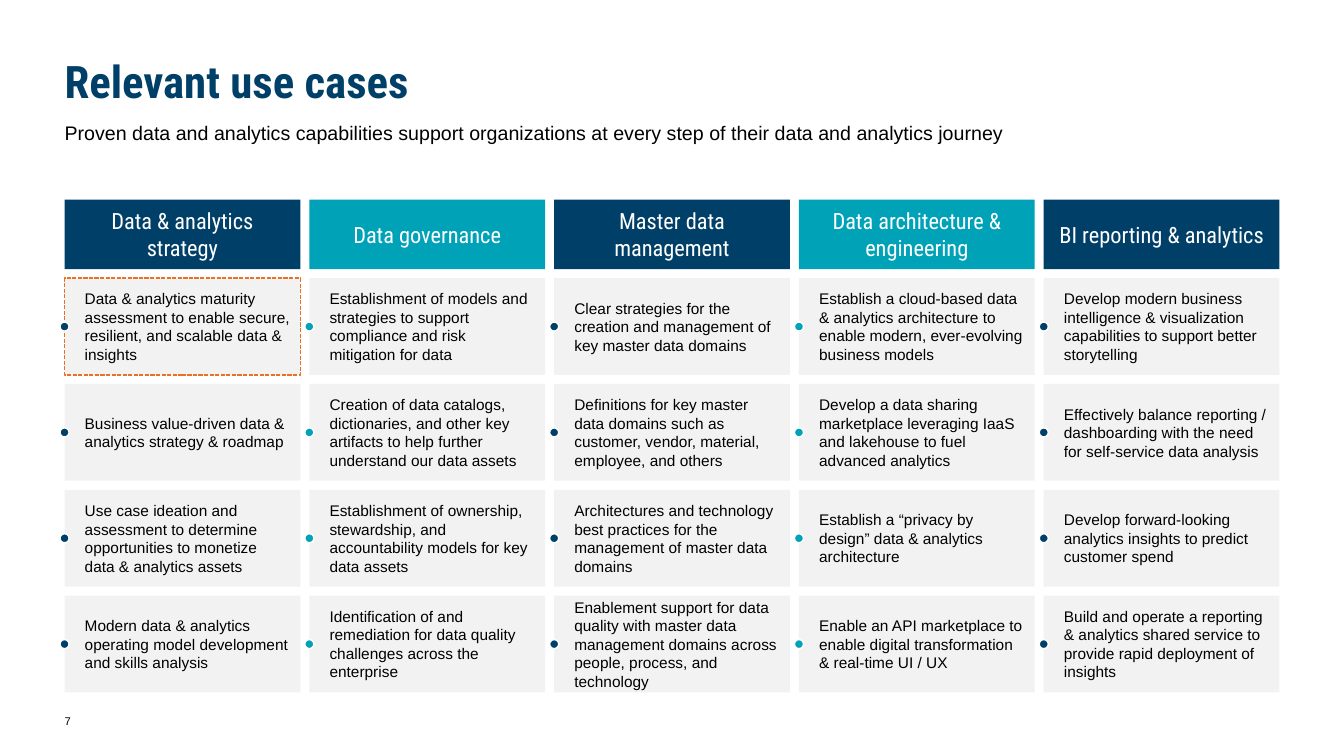
from dataclasses import dataclass

from pptx import Presentation
from pptx import util as u
from pptx.dml.color import RGBColor
from pptx.enum import dml, shapes, text

NAVY = RGBColor(0x00, 0x40, 0x68)
TEAL = RGBColor(0x00, 0xA2, 0xB8)
ORANGE = RGBColor(0xEA, 0x70, 0x24)
GREY = RGBColor(0xF2, 0xF2, 0xF2)
WHITE = RGBColor(0xFF, 0xFF, 0xFF)
BLACK = RGBColor(0x00, 0x00, 0x00)
HEADING, BODY = "Roboto Condensed", "Arial"

# Grid in inches: five columns, one header row and four card rows
LEFT, WIDTH, GAP = 0.64, 12.05, 0.09
HEADER_TOP, HEADER_H = 1.98, 0.69
CARD_TOP, CARD_H = HEADER_TOP + HEADER_H + GAP, 0.96
DOT = 0.09


@dataclass(frozen=True)
class Box:
    left: float
    top: float
    width: float
    height: float

    def emu(self) -> list[int]:
        return [u.Inches(v) for v in (self.left, self.top, self.width, self.height)]


@dataclass(frozen=True)
class Style:
    font: str
    size: int
    color: RGBColor
    bold: bool = False
    align: text.PP_ALIGN = text.PP_ALIGN.LEFT
    anchor: text.MSO_ANCHOR = text.MSO_ANCHOR.MIDDLE
    insets: tuple[float, float, float, float] = (0.1, 0.05, 0.1, 0.05)


@dataclass(frozen=True)
class Capability:
    title: str
    color: RGBColor
    use_cases: tuple[str, ...]


TITLE = Style(HEADING, 32, NAVY, bold=True, anchor=text.MSO_ANCHOR.BOTTOM,
              insets=(0, 0.05, 0, 0.05))
SUBTITLE = Style(BODY, 14, BLACK, anchor=text.MSO_ANCHOR.TOP, insets=(0, 0, 0, 0))
PAGE_NUMBER = Style(BODY, 8, BLACK, insets=(0, 0.05, 0.1, 0.05))
HEADER = Style(HEADING, 16, WHITE, align=text.PP_ALIGN.CENTER)
CARD = Style(BODY, 11, BLACK, insets=(0.2, 0.05, 0.1, 0.05))

CAPABILITIES = (
    Capability("Data & analytics strategy", NAVY, (
        "Data & analytics maturity assessment to enable secure, resilient, "
        "and scalable data & insights",
        "Business value-driven data & analytics strategy & roadmap",
        "Use case ideation and assessment to determine opportunities to "
        "monetize data & analytics assets",
        "Modern data & analytics operating model development and skills analysis",
    )),
    Capability("Data governance", TEAL, (
        "Establishment of models and strategies to support compliance and "
        "risk mitigation for data",
        "Creation of data catalogs, dictionaries, and other key artifacts to "
        "help further understand our data assets",
        "Establishment of ownership, stewardship, and accountability models "
        "for key data assets",
        "Identification of and remediation for data quality challenges across "
        "the enterprise",
    )),
    Capability("Master data management", NAVY, (
        "Clear strategies for the creation and management of key master data domains",
        "Definitions for key master data domains such as customer, vendor, "
        "material, employee, and others",
        "Architectures and technology best practices for the management of "
        "master data domains",
        "Enablement support for data quality with master data management "
        "domains across people, process, and technology",
    )),
    Capability("Data architecture & engineering", TEAL, (
        "Establish a cloud-based data & analytics architecture to enable "
        "modern, ever-evolving business models",
        "Develop a data sharing marketplace leveraging IaaS and lakehouse to "
        "fuel advanced analytics",
        "Establish a “privacy by design” data & analytics architecture",
        "Enable an API marketplace to enable digital transformation & "
        "real-time UI / UX",
    )),
    Capability("BI reporting & analytics", NAVY, (
        "Develop modern business intelligence & visualization capabilities to "
        "support better storytelling",
        "Effectively balance reporting / dashboarding with the need for "
        "self-service data analysis",
        "Develop forward-looking analytics insights to predict customer spend",
        "Build and operate a reporting & analytics shared service to provide "
        "rapid deployment of insights",
    )),
)
COLUMN_W = (WIDTH - GAP * (len(CAPABILITIES) - 1)) / len(CAPABILITIES)


def write(sp, words: str, style: Style) -> None:
    tf = sp.text_frame
    tf.word_wrap = True
    tf.vertical_anchor = style.anchor
    tf.margin_left, tf.margin_top, tf.margin_right, tf.margin_bottom = (
        u.Inches(v) for v in style.insets)
    p = tf.paragraphs[0]
    p.alignment = style.align
    r = p.add_run()
    r.text = words
    r.font.name, r.font.size, r.font.bold = style.font, u.Pt(style.size), style.bold
    r.font.color.rgb = style.color


def add_text(s, box: Box, words: str, style: Style) -> None:
    write(s.shapes.add_textbox(*box.emu()), words, style)


def add_filled(s, kind: shapes.MSO_SHAPE, box: Box, fill: RGBColor,
               line: RGBColor | None = None):
    sp = s.shapes.add_shape(kind, *box.emu())
    sp.shadow.inherit = False
    sp.fill.solid()
    sp.fill.fore_color.rgb = fill
    if line is None:
        sp.line.fill.background()
    else:
        sp.line.color.rgb = line
        sp.line.width = u.Pt(1)
    return sp


def add_column(s, index: int, capability: Capability) -> None:
    """Draw a header, its cards, and a dot centred on each card's left edge."""
    left = LEFT + index * (COLUMN_W + GAP)
    header = add_filled(s, shapes.MSO_SHAPE.RECTANGLE,
                        Box(left, HEADER_TOP, COLUMN_W, HEADER_H), capability.color)
    write(header, capability.title, HEADER)
    for row, use_case in enumerate(capability.use_cases):
        top = CARD_TOP + row * (CARD_H + GAP)
        highlighted = index == row == 0
        card = add_filled(s, shapes.MSO_SHAPE.RECTANGLE, Box(left, top, COLUMN_W, CARD_H),
                          GREY, ORANGE if highlighted else None)
        if highlighted:
            card.line.dash_style = dml.MSO_LINE.SQUARE_DOT
        write(card, use_case, CARD)
        add_filled(s, shapes.MSO_SHAPE.OVAL,
                   Box(left - DOT / 2, top + (CARD_H - DOT) / 2, DOT, DOT),
                   capability.color, WHITE)


def main() -> None:
    prs = Presentation()
    prs.slide_width, prs.slide_height = u.Inches(13.33), u.Inches(7.5)
    s = prs.slides.add_slide(prs.slide_layouts[6])
    add_text(s, Box(LEFT, 0.64, WIDTH, 0.48), "Relevant use cases", TITLE)
    add_text(s, Box(LEFT, 1.2, WIDTH, 0.3),
             "Proven data and analytics capabilities support organizations at "
             "every step of their data and analytics journey", SUBTITLE)
    for index, capability in enumerate(CAPABILITIES):
        add_column(s, index, capability)
    add_text(s, Box(LEFT, 6.95, 3, 0.4), "7", PAGE_NUMBER)
    prs.save("out.pptx")


if __name__ == "__main__":
    main()
